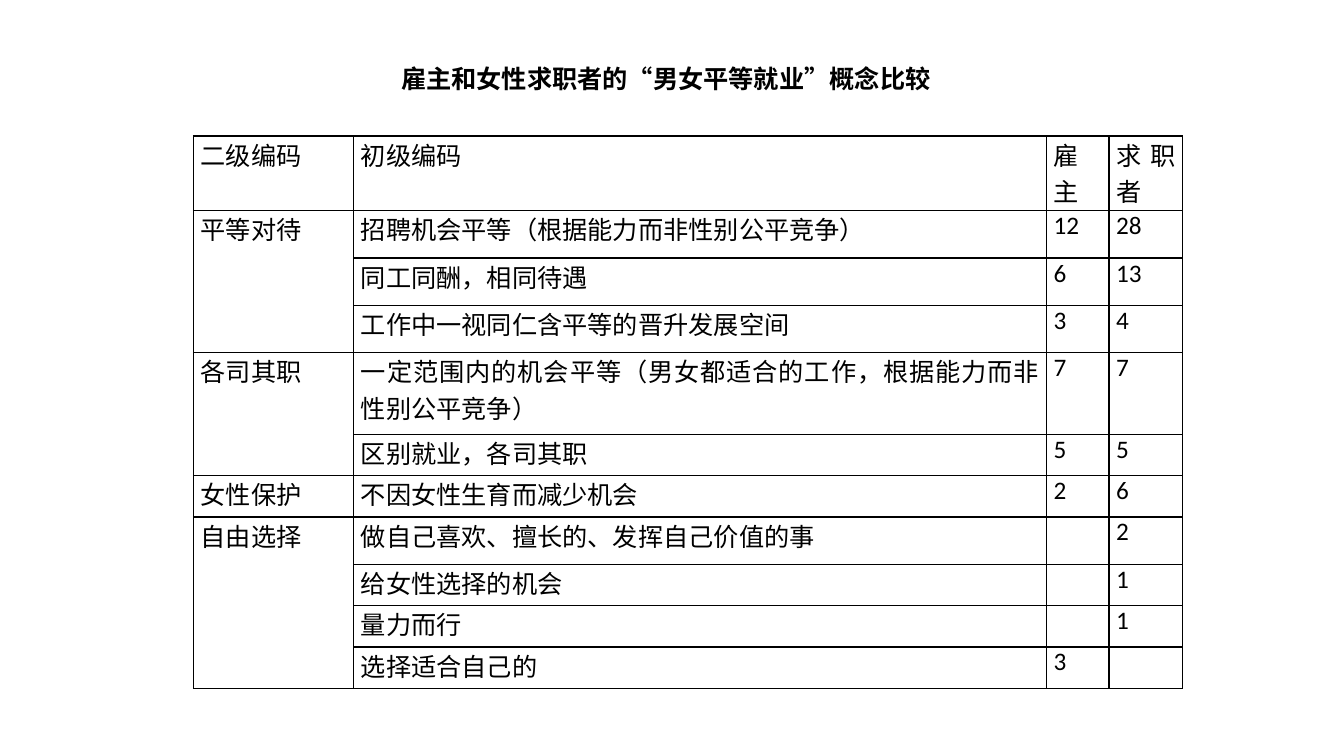
from dataclasses import dataclass

from lxml import etree
from pptx import Presentation
from pptx import util as u
from pptx.dml.color import RGBColor
from pptx.enum import text
from pptx.oxml import ns

PX = 9144  # EMU per px, 100 px to the inch


@dataclass(frozen=True)
class Theme:
    ink: str = "000000"
    title_font: str = "Arial"
    table_font: str = "Calibri"
    size: int = 18
    border: int = 1


def px(length):
    return u.Emu(length * PX)


def apply(target, values):
    for name, value in values.items():
        setattr(target, name, value)


class SlideBuilder:
    def __init__(self, slide, theme):
        self.slide = slide
        self.theme = theme

    def font(self, paragraph, face, bold=False):
        apply(paragraph.font, {"name": face, "size": u.Pt(self.theme.size), "bold": bold})
        paragraph.font.color.rgb = RGBColor.from_string(self.theme.ink)

    def title(self, wording, left, top, width, height):
        box = self.slide.shapes.add_textbox(*map(px, (left, top, width, height)))
        frame = box.text_frame
        apply(frame, {"word_wrap": True, "auto_size": text.MSO_AUTO_SIZE.SHAPE_TO_FIT_TEXT})
        frame.text = wording
        self.font(frame.paragraphs[0], self.theme.title_font, bold=True)

    def borders(self, cell):
        properties = cell._tc.get_or_add_tcPr()
        for index, side in enumerate(("a:lnL", "a:lnR", "a:lnT", "a:lnB")):
            line = etree.Element(ns.qn(side), w=str(u.Pt(self.theme.border)))
            fill = etree.SubElement(line, ns.qn("a:solidFill"))
            etree.SubElement(fill, ns.qn("a:srgbClr"), val=self.theme.ink)
            properties.insert(index, line)

    def cell(self, cell, wording):
        apply(cell, {"margin_left": px(7), "margin_right": px(7),
                     "margin_top": 0, "margin_bottom": 0})
        cell.fill.background()
        self.borders(cell)
        cell.text = wording
        paragraph = cell.text_frame.paragraphs[0]
        paragraph.alignment = text.PP_ALIGN.JUSTIFY
        self.font(paragraph, self.theme.table_font)

    def table(self, rows, left, top, widths, heights):
        frame = self.slide.shapes.add_table(
            len(rows), len(widths),
            *map(px, (left, top, sum(widths), sum(heights))))
        table = frame.table
        apply(table, {"first_row": False, "horz_banding": False})
        for column, width in zip(table.columns, widths):
            column.width = px(width)
        for row, height in zip(table.rows, heights):
            row.height = px(height)
        for r, row in enumerate(rows):
            for c, wording in enumerate(row):
                self.cell(table.cell(r, c), wording)
        return table


# Secondary codes, each with its primary codes and the two counts
HEADER = ("二级编码", "初级编码", "雇主", "求职者")
CODES = {
    "平等对待": [
        ("招聘机会平等（根据能力而非性别公平竞争）", "12", "28"),
        ("同工同酬，相同待遇", "6", "13"),
        ("工作中一视同仁含平等的晋升发展空间", "3", "4"),
    ],
    "各司其职": [
        ("一定范围内的机会平等（男女都适合的工作，根据能力而非性别公平竞争）", "7", "7"),
        ("区别就业，各司其职", "5", "5"),
    ],
    "女性保护": [("不因女性生育而减少机会", "2", "6")],
    "自由选择": [
        ("做自己喜欢、擅长的、发挥自己价值的事", "", "2"),
        ("给女性选择的机会", "", "1"),
        ("量力而行", "", "1"),
        ("选择适合自己的", "3", ""),
    ],
}
COLUMN_WIDTHS = (159, 687, 62, 73)
ROW_HEIGHTS = (74, 47, 47, 47, 81, 41, 41, 47, 41, 41, 41)


def main():
    deck = Presentation()
    apply(deck, {"slide_width": px(1333), "slide_height": px(750)})
    builder = SlideBuilder(deck.slides.add_slide(deck.slide_layouts[6]), Theme())

    # Comparison table
    rows = [HEADER]
    for secondary, primaries in CODES.items():
        for i, primary in enumerate(primaries):
            rows.append((secondary if i == 0 else "", *primary))
    comparison = builder.table(rows, 192, 135, COLUMN_WIDTHS, ROW_HEIGHTS)

    # Each secondary code spans its primary codes
    first = 1
    for primaries in CODES.values():
        last = first + len(primaries) - 1
        if last > first:
            comparison.cell(first, 0).merge(comparison.cell(last, 0))
        first = last + 1

    # Title
    builder.title("雇主和女性求职者的“男女平等就业”概念比较", 388, 58, 550, 40)

    deck.save("out.pptx")


if __name__ == "__main__":
    main()
